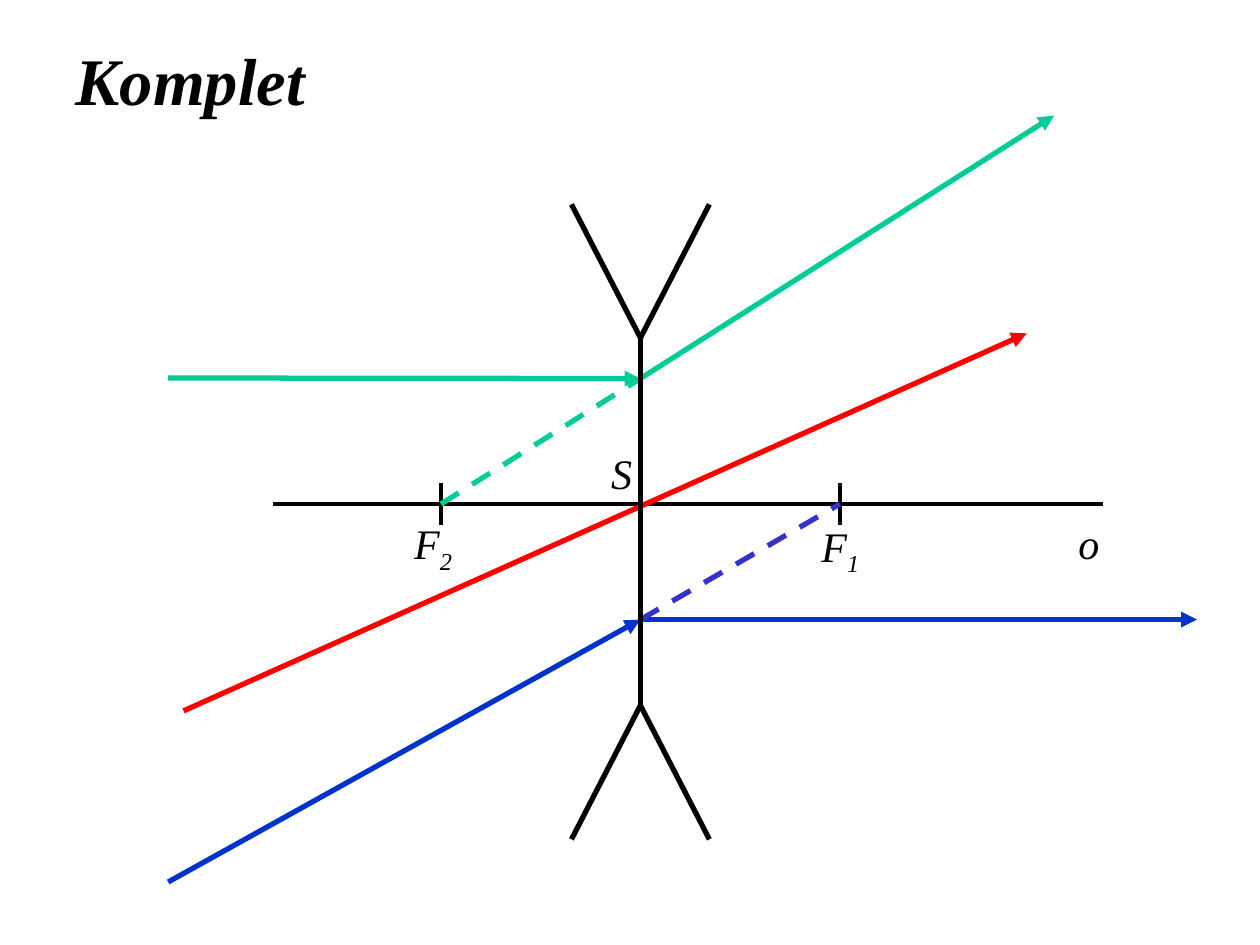
from lxml import etree
from pptx import Presentation
from pptx.dml.color import RGBColor
from pptx.enum.dml import MSO_LINE
from pptx.enum.shapes import MSO_CONNECTOR
from pptx.enum.text import MSO_ANCHOR, MSO_AUTO_SIZE, PP_ALIGN
from pptx.oxml.ns import qn
from pptx.util import Cm, Pt

STRAIGHT = MSO_CONNECTOR.STRAIGHT
DASH = MSO_LINE.DASH
MIDDLE, TOP = MSO_ANCHOR.MIDDLE, MSO_ANCHOR.TOP
LEFT = PP_ALIGN.LEFT
NO_AUTOFIT = MSO_AUTO_SIZE.NONE

BLACK, GREEN, RED, BLUE, VIOLET = "000000", "00CC99", "FF0000", "0033CC", "3333CC"


def draw_line(shapes, start, end, color, width=3, dashed=False, arrow=False):
    line = shapes.add_connector(STRAIGHT, *[Cm(v) for v in (*start, *end)])
    line.line.color.rgb = RGBColor.from_string(color)
    line.line.width = Pt(width)
    if dashed:
        line.line.dash_style = DASH
    properties = line._element.spPr
    if arrow:
        etree.SubElement(properties.find(qn("a:ln")), qn("a:tailEnd"), type="triangle")
    etree.SubElement(properties, qn("a:effectLst"))


def write_text(frame, text, size, bold=False, subscript="", anchor=TOP):
    frame_format = {"word_wrap": True, "auto_size": NO_AUTOFIT, "vertical_anchor": anchor}
    for name, value in frame_format.items():
        setattr(frame, name, value)
    paragraph = frame.paragraphs[0]
    paragraph.alignment = LEFT
    font_format = {"name": "Times New Roman", "size": Pt(size), "bold": bold, "italic": True}
    for part in filter(None, (text, subscript)):
        run = paragraph.add_run()
        run.text = part
        for name, value in font_format.items():
            setattr(run.font, name, value)
        run.font.color.rgb = RGBColor.from_string(BLACK)
    if subscript:
        run._r.get_or_add_rPr().set("baseline", "-25000")


prs = Presentation()
prs.slide_width, prs.slide_height = Cm(25.4), Cm(19.05)
slide = prs.slides.add_slide(prs.slide_layouts[5])
shapes = slide.shapes

title = shapes.title
title.left, title.top, title.width, title.height = Cm(1.27), Cm(0), Cm(21.59), Cm(3.18)
write_text(title.text_frame, "Komplet", 38, bold=True, anchor=MIDDLE)

# Optical axis with both focal points
axis_y, lens_x = 10.16, 12.91
focus_2, focus_1 = (8.89, axis_y), (16.93, axis_y)
draw_line(shapes, (5.5, axis_y), (22.23, axis_y), BLACK, 2.25)
for focus_x, _ in (focus_1, focus_2):
    draw_line(shapes, (focus_x, axis_y - 0.42), (focus_x, axis_y + 0.42), BLACK, 2.25)

# Rays, each bent where it meets the lens
parallel_hit, focal_hit = (lens_x, 7.63), (lens_x, 12.49)
rays = [
    ((3.39, 7.62), parallel_hit, GREEN),
    (parallel_hit, (21.25, 2.33), GREEN),
    ((3.7, 14.33), (20.7, 6.72), RED),
    ((3.39, 17.78), focal_hit, BLUE),
    (focal_hit, (24.13, 12.49), BLUE),
]
for start, end, color in rays:
    draw_line(shapes, start, end, color, arrow=True)
draw_line(shapes, focus_2, parallel_hit, GREEN, dashed=True)
draw_line(shapes, focal_hit, focus_1, VIOLET, dashed=True)

# Diverging lens: a stem with a fork at each end
lens = shapes.add_group_shape().shapes
lens_top, lens_bottom = 6.81, 14.22
draw_line(lens, (lens_x, lens_top), (lens_x, lens_bottom), BLACK)
for fork_y, tip_y in ((lens_top, 4.12), (lens_bottom, 16.92)):
    for spread in (-1.39, 1.39):
        draw_line(lens, (lens_x, fork_y), (lens_x + spread, tip_y), BLACK)

# Point labels
labels = [
    ("F", "2", 8.1, 10.31, 2.44),
    ("F", "1", 16.31, 10.36, 2.21),
    ("S", "", 12.07, 8.89, 0.95),
    ("o", "", 21.49, 10.31, 2.21),
]
for letter, index, left, top, width in labels:
    label = shapes.add_textbox(Cm(left), Cm(top), Cm(width), Cm(1.27))
    write_text(label.text_frame, letter, 24, subscript=index)

prs.save("out.pptx")
